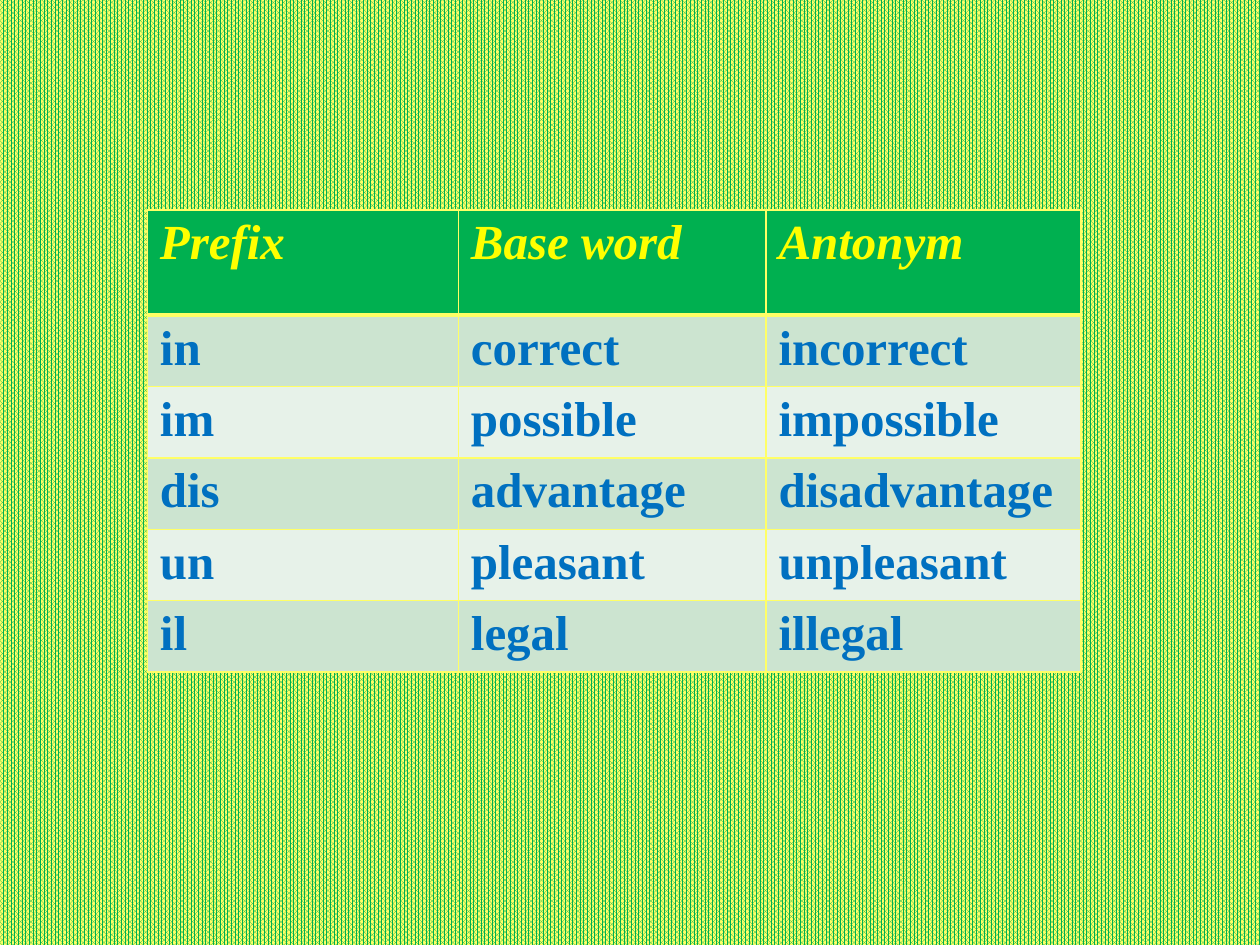
from dataclasses import dataclass

from lxml.etree import SubElement
from pptx import Presentation
from pptx.dml.color import RGBColor
from pptx.enum.dml import MSO_PATTERN
from pptx.oxml.ns import qn
from pptx.slide import Slide
from pptx.table import _Cell
from pptx.util import Cm, Pt

GREEN = RGBColor(0x00, 0xB0, 0x50)
PALE_YELLOW = RGBColor(0xFF, 0xFF, 0x66)
YELLOW = RGBColor(0xFF, 0xFF, 0x00)
BLUE = RGBColor(0x00, 0x70, 0xC0)
BAND_DARK = RGBColor(0xCC, 0xE4, 0xD0)
BAND_LIGHT = RGBColor(0xE7, 0xF2, 0xE9)

FONT_NAME = "Times New Roman"
COLUMN_WIDTHS = [Cm(6.27), Cm(6.2), Cm(6.35)]
HEADER_HEIGHT = Cm(2.12)
ROW_HEIGHT = Cm(1.44)
THIN, THICK = Pt(1), Pt(3)


@dataclass(frozen=True)
class Style:
    fill: RGBColor
    text: RGBColor
    italic: bool = False


HEADER = Style(GREEN, YELLOW, italic=True)
BANDS = [Style(BAND_DARK, BLUE), Style(BAND_LIGHT, BLUE)]

HEADINGS = ("Prefix", "Base word", "Antonym")
WORDS = [
    ("in", "correct"),
    ("im", "possible"),
    ("dis", "advantage"),
    ("un", "pleasant"),
    ("il", "legal"),
]


def set_borders(cell: _Cell, top: int, bottom: int) -> None:
    properties = cell._tc.get_or_add_tcPr()
    for side, width in (("L", THIN), ("R", THIN), ("T", top), ("B", bottom)):
        line = SubElement(properties, qn(f"a:ln{side}"), w=str(width))
        fill = SubElement(line, qn("a:solidFill"))
        SubElement(fill, qn("a:srgbClr"), val=str(PALE_YELLOW))


def write_cell(cell: _Cell, text: str, style: Style) -> None:
    cell.fill.solid()
    cell.fill.fore_color.rgb = style.fill
    run = cell.text_frame.paragraphs[0].add_run()
    run.text = text
    run.font.name = FONT_NAME
    run.font.size = Pt(28)
    run.font.bold = True
    run.font.italic = style.italic
    run.font.color.rgb = style.text


def add_word_table(slide: Slide) -> None:
    # Each antonym is its prefix joined to its base word
    rows = [HEADINGS] + [(prefix, base, prefix + base) for prefix, base in WORDS]
    table = slide.shapes.add_table(
        len(rows), len(HEADINGS), Cm(2.97), Cm(4.23),
        sum(COLUMN_WIDTHS), HEADER_HEIGHT + len(WORDS) * ROW_HEIGHT,
    ).table
    for column, width in zip(table.columns, COLUMN_WIDTHS):
        column.width = width

    for index, texts in enumerate(rows):
        is_header = index == 0
        table.rows[index].height = HEADER_HEIGHT if is_header else ROW_HEIGHT
        style = HEADER if is_header else BANDS[(index - 1) % 2]
        for cell, text in zip(table.rows[index].cells, texts):
            set_borders(cell, THICK if index == 1 else THIN, THICK if is_header else THIN)
            write_cell(cell, text, style)


def main() -> None:
    presentation = Presentation()
    presentation.slide_width = Cm(25.4)
    presentation.slide_height = Cm(19.05)
    slide = presentation.slides.add_slide(presentation.slide_layouts[6])

    # Patterned background
    background = slide.background.fill
    background.patterned()
    background.pattern = MSO_PATTERN.PERCENT_80
    background.fore_color.rgb = GREEN
    background.back_color.rgb = PALE_YELLOW

    add_word_table(slide)
    presentation.save("out.pptx")


if __name__ == "__main__":
    main()
